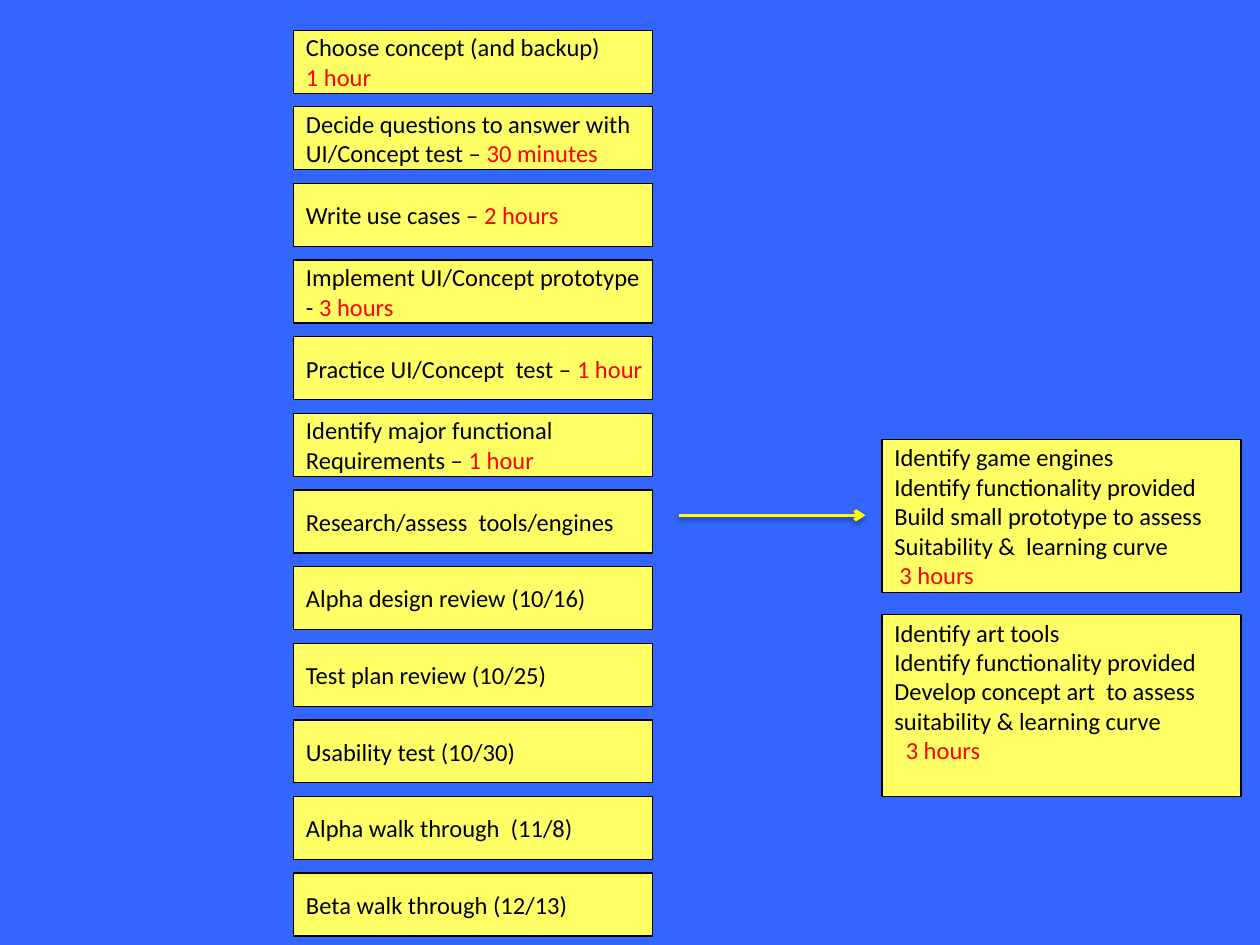
from dataclasses import dataclass

from lxml.etree import SubElement
from pptx import Presentation
from pptx.dml.color import RGBColor
from pptx.enum.shapes import MSO_CONNECTOR as Connector, MSO_SHAPE as Shape
from pptx.enum.text import MSO_ANCHOR as Anchor, PP_ALIGN as Align
from pptx.oxml.ns import qn
from pptx.shapes.connector import Connector as ConnectorShape
from pptx.util import Inches, Pt


@dataclass(frozen=True)
class Theme:
    background: RGBColor = RGBColor(0x33, 0x66, 0xFF)
    box: RGBColor = RGBColor(0xFF, 0xFF, 0x66)
    ink: RGBColor = RGBColor(0, 0, 0)
    effort: RGBColor = RGBColor(0xFF, 0, 0)
    arrow: RGBColor = RGBColor(0xFF, 0xFF, 0)
    font: str = "Calibri"
    text_size: float = 14
    border: float = 0.75
    arrow_width: float = 2


@dataclass(frozen=True)
class Line:
    text: str = ""
    effort: str = ""
    indent: float = 0


@dataclass(frozen=True)
class Detail:
    top: float
    height: float
    lines: list[Line]
    bottom_inset: float = 0.05


THEME = Theme()
BOX_WIDTH = 2.85
STEP_LEFT, STEP_HEIGHT = 2.33, 0.5
FIRST_TOP, LAST_TOP = 0.24, 6.93
DETAIL_LEFT = 7

STEPS = [
    [Line("Choose concept (and backup)"), Line(effort="1 hour")],
    [Line("Decide questions to answer with"), Line("UI/Concept test – ", "30 minutes")],
    [Line("Write use cases – ", "2 hours")],
    [Line("Implement UI/Concept prototype"), Line("- ", "3 hours")],
    [Line("Practice UI/Concept  test – ", "1 hour")],
    [Line("Identify major functional"), Line("Requirements – ", "1 hour")],
    [Line("Research/assess  tools/engines")],
    [Line("Alpha design review (10/16)")],
    [Line("Test plan review (10/25)")],
    [Line("Usability test (10/30)")],
    [Line("Alpha walk through  (11/8)")],
    [Line("Beta walk through (12/13)")],
]
ENGINES = Detail(3.49, 1.21, [
    Line("Identify game engines"),
    Line("Identify functionality provided"),
    Line("Build small prototype to assess"),
    Line("Suitability &  learning curve"),
    Line(effort="3 hours", indent=0.04),
])
ART_TOOLS = Detail(4.88, 1.44, [
    Line("Identify art tools"),
    Line("Identify functionality provided"),
    Line("Develop concept art  to assess"),
    Line("suitability & learning curve"),
    Line(effort="3 hours", indent=0.09),
], bottom_inset=0.28)


def add_span(para, text: str, color: RGBColor) -> None:
    span = para.add_run()
    span.text = text
    formats = {"name": THEME.font, "size": Pt(THEME.text_size)}
    for name, value in formats.items():
        setattr(span.font, name, value)
    span.font.color.rgb = color


def add_box(shapes, left: float, top: float, height: float,
            lines: list[Line], bottom_inset: float = 0.05) -> None:
    box = shapes.add_shape(Shape.RECTANGLE, Inches(left), Inches(top),
                           Inches(BOX_WIDTH), Inches(height))
    box.shadow.inherit = False
    box.fill.solid()
    box.fill.fore_color.rgb = THEME.box
    box.line.color.rgb = THEME.ink
    box.line.width = Pt(THEME.border)
    frame = box.text_frame
    formats = {"word_wrap": False, "vertical_anchor": Anchor.MIDDLE,
               "margin_bottom": Inches(bottom_inset)}
    for name, value in formats.items():
        setattr(frame, name, value)
    for index, line in enumerate(lines):
        para = frame.add_paragraph() if index else frame.paragraphs[0]
        para.alignment = Align.LEFT
        if line.indent:
            para._p.get_or_add_pPr().set("marL", str(Inches(line.indent)))
        for text, color in ((line.text, THEME.ink), (line.effort, THEME.effort)):
            if text:
                add_span(para, text, color)


def add_detail(shapes, detail: Detail) -> None:
    add_box(shapes, DETAIL_LEFT, detail.top, detail.height,
            detail.lines, detail.bottom_inset)


def add_soft_shadow(arrow: ConnectorShape) -> None:
    effects = SubElement(arrow._element.spPr, qn("a:effectLst"))
    shadow = SubElement(effects, qn("a:outerShdw"), blurRad=str(Pt(3.1)),
                        dist=str(Pt(1.6)), dir="5400000", rotWithShape="0")
    color = SubElement(shadow, qn("a:srgbClr"), val=str(THEME.ink))
    SubElement(color, qn("a:alpha"), val="38000")


def add_arrow(shapes, start: float, end: float, level: float) -> None:
    arrow = shapes.add_connector(Connector.STRAIGHT, Inches(start), Inches(level),
                                 Inches(end), Inches(level))
    arrow.line.color.rgb = THEME.arrow
    arrow.line.width = Pt(THEME.arrow_width)
    SubElement(arrow.line._get_or_add_ln(), qn("a:tailEnd"), type="arrow")
    add_soft_shadow(arrow)


def main() -> None:
    deck = Presentation()
    deck.slide_width, deck.slide_height = Inches(10), Inches(7.5)
    page = deck.slides.add_slide(deck.slide_layouts[6])
    page.background.fill.solid()
    page.background.fill.fore_color.rgb = THEME.background

    add_arrow(page.shapes, 5.39, 6.87, 4.09)
    add_detail(page.shapes, ENGINES)
    schedule = page.shapes.add_group_shape()
    pitch = (LAST_TOP - FIRST_TOP) / (len(STEPS) - 1)
    for row, lines in enumerate(STEPS):
        add_box(schedule.shapes, STEP_LEFT, FIRST_TOP + row * pitch, STEP_HEIGHT, lines)
    add_detail(page.shapes, ART_TOOLS)
    deck.save("out.pptx")


if __name__ == "__main__":
    main()
